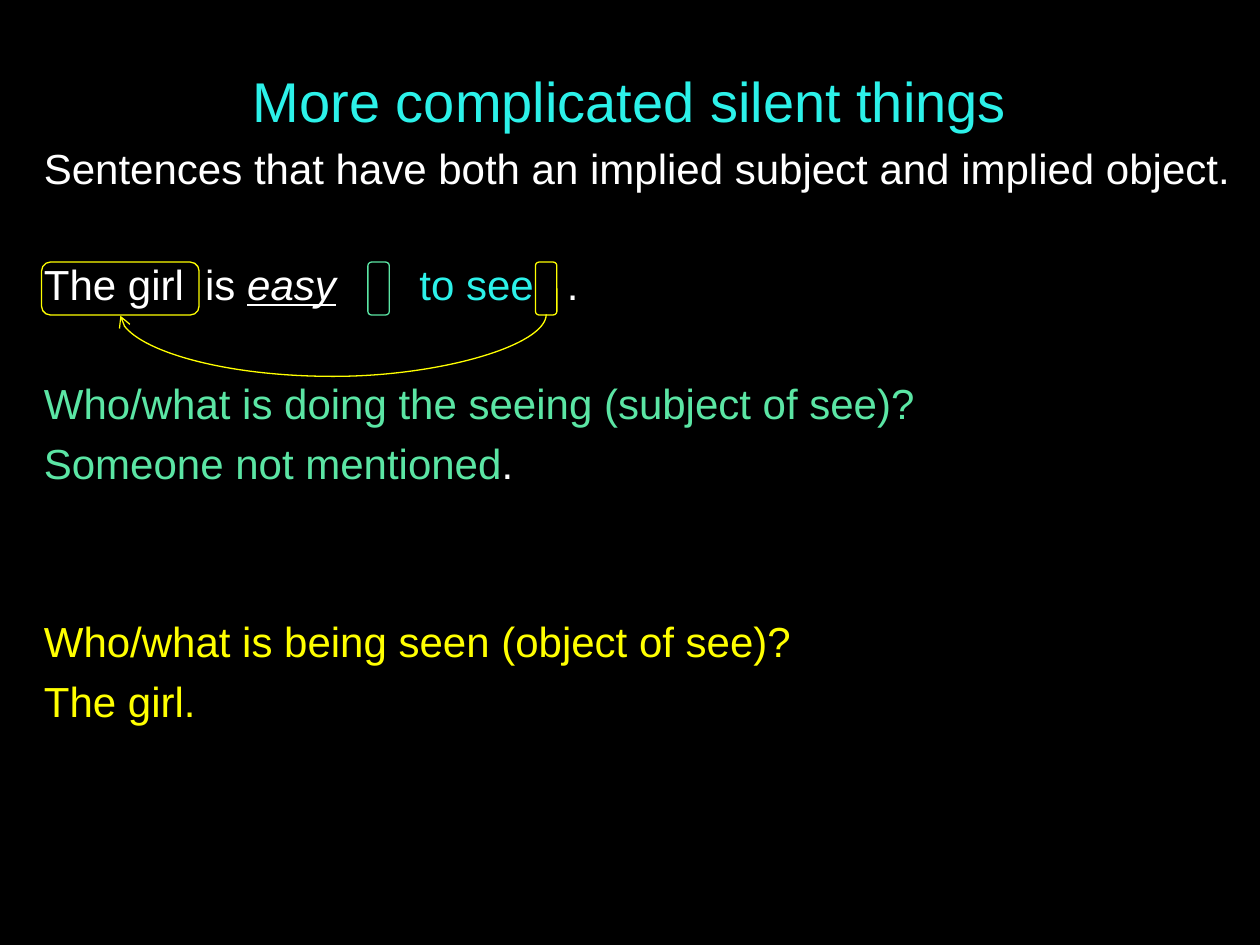
from pptx import Presentation
from pptx.dml.color import RGBColor
from pptx.enum.shapes import MSO_CONNECTOR as Connector, MSO_SHAPE as Shape
from pptx.enum.text import MSO_ANCHOR as Anchor, PP_ALIGN as Align
from pptx.oxml.ns import qn
from pptx.util import Inches, Pt
from lxml.etree import SubElement

THEME = {
    "background": "000000", "text": "FFFFFF", "accent": "2CF1E9",
    "subject": "5BE5A4", "object": "FFFF00",
    "font": "Arial", "title_size": 32, "body_size": 24,
    "line_width": 0.75, "line_height": 27.6, "space_before": 5.8,
}

# Content: paragraphs are (blank lines above, [(text, colour, emphasised)])
TITLE = [(0, [("More complicated silent things", "accent", False)])]
INTRO = [(0, [("Sentences that have both an implied subject and implied object.",
               "text", False)])]
EXAMPLE = [
    (0, [("The girl\tis ", "text", False), ("easy", "text", True),
         ("\t", "text", False), ("to see", "accent", False),
         ("\t.", "text", False)]),
    (1, [("Who/what is doing the seeing (subject of see)?", "subject", False)]),
    (0, [("Someone not mentioned", "subject", False), (".", "text", False)]),
    (2, [("Who/what is being seen (object of see)?", "object", False)]),
    (0, [("The girl.", "object", False)]),
]
SENTENCE_TABS = (1.28, 2.98, 4.15)

# Boxes around the spoken and silent words: left, width, colour
BOX_TOP, BOX_HEIGHT = 2.08, 0.42
BOXES = {
    "silent subject": (2.92, 0.17, "subject"),
    "silent object": (4.25, 0.17, "object"),
    "girl": (0.33, 1.25, "object"),
}
ARROW_DEPTH = 0.5


def color(name):
    return RGBColor.from_string(THEME[name])


def add_text(slide, place, paragraphs, size, align=Align.LEFT,
             anchor=Anchor.TOP, space_before=0):
    frame = slide.shapes.add_textbox(*map(Inches, place)).text_frame
    frame.word_wrap = True
    frame.vertical_anchor = anchor
    for index, (blank_lines, runs) in enumerate(paragraphs):
        paragraph = frame.paragraphs[0] if index == 0 else frame.add_paragraph()
        paragraph.alignment = align
        paragraph.font.name = THEME["font"]
        paragraph.font.size = Pt(size)
        skipped = blank_lines * (THEME["line_height"] + space_before)
        paragraph.space_before = Pt(space_before + skipped)
        for text, color_name, emphasised in runs:
            run = paragraph.add_run()
            run.text = text
            run.font.color.rgb = color(color_name)
            if emphasised:
                run.font.italic = run.font.underline = True
    return frame


def set_tabs(paragraph, positions):
    tabs = SubElement(paragraph._p.get_or_add_pPr(), qn("a:tabLst"))
    for position in positions:
        SubElement(tabs, qn("a:tab"), pos=str(Inches(position)), algn="l")
    # Tab stops come before the default run properties
    defaults = tabs.getparent().find(qn("a:defRPr"))
    if defaults is not None:
        defaults.addprevious(tabs)


def add_word_box(slide, left, width, color_name):
    box = slide.shapes.add_shape(Shape.ROUNDED_RECTANGLE, Inches(left),
                                 Inches(BOX_TOP), Inches(width), Inches(BOX_HEIGHT))
    box.shadow.inherit = False
    box.fill.background()
    box.line.color.rgb = color(color_name)
    box.line.width = Pt(THEME["line_width"])
    return box


def add_curved_arrow(slide, start_box, end_box):
    """Curve from one box's bottom to another's, sagging below both."""
    arrow = slide.shapes.add_connector(Connector.CURVE, 0, 0, 0, 0)
    arrow.begin_connect(start_box, 2)
    arrow.end_connect(end_box, 2)
    start_x, end_x, y = arrow.begin_x, arrow.end_x, arrow.begin_y
    # A quarter turn makes the connector leave and arrive vertically
    thickness, span = Inches(0.01), start_x - end_x
    properties = arrow._element.spPr
    transform = properties.find(qn("a:xfrm"))
    for flip in ("flipH", "flipV"):
        transform.attrib.pop(flip, None)
    transform.set("rot", str(90 * 60000))
    arrow.left = (start_x + end_x - thickness) // 2
    arrow.top = y - span // 2
    arrow.width, arrow.height = thickness, span
    guides = properties.find(qn("a:prstGeom")).get_or_add_avLst()
    sag = round(Inches(ARROW_DEPTH) / thickness * 100000)
    SubElement(guides, qn("a:gd"), name="adj1", fmla=f"val {sag}")
    arrow.line.color.rgb = color("object")
    arrow.line.width = Pt(THEME["line_width"])
    SubElement(arrow.line._get_or_add_ln(), qn("a:tailEnd"), type="arrow")
    SubElement(properties, qn("a:effectLst"))


def main():
    presentation = Presentation()
    presentation.slide_width, presentation.slide_height = Inches(10), Inches(7.5)
    slide = presentation.slides.add_slide(presentation.slide_layouts[6])
    slide.background.fill.solid()
    slide.background.fill.fore_color.rgb = color("background")

    # Title, introduction and example
    add_text(slide, (0.75, 0.17, 8.5, 1.25), TITLE, THEME["title_size"],
             Align.CENTER, Anchor.MIDDLE)
    body = {"size": THEME["body_size"], "space_before": THEME["space_before"]}
    add_text(slide, (0.25, 1.08, 9.75, 1.83), INTRO, **body)
    example = add_text(slide, (0.25, 2, 9.75, 3.75), EXAMPLE, **body)
    set_tabs(example.paragraphs[0], SENTENCE_TABS)

    # Word boxes and the arrow from the silent object to its meaning
    boxes = {name: add_word_box(slide, *box) for name, box in BOXES.items()}
    add_curved_arrow(slide, boxes["silent object"], boxes["girl"])

    presentation.save("out.pptx")


if __name__ == "__main__":
    main()
